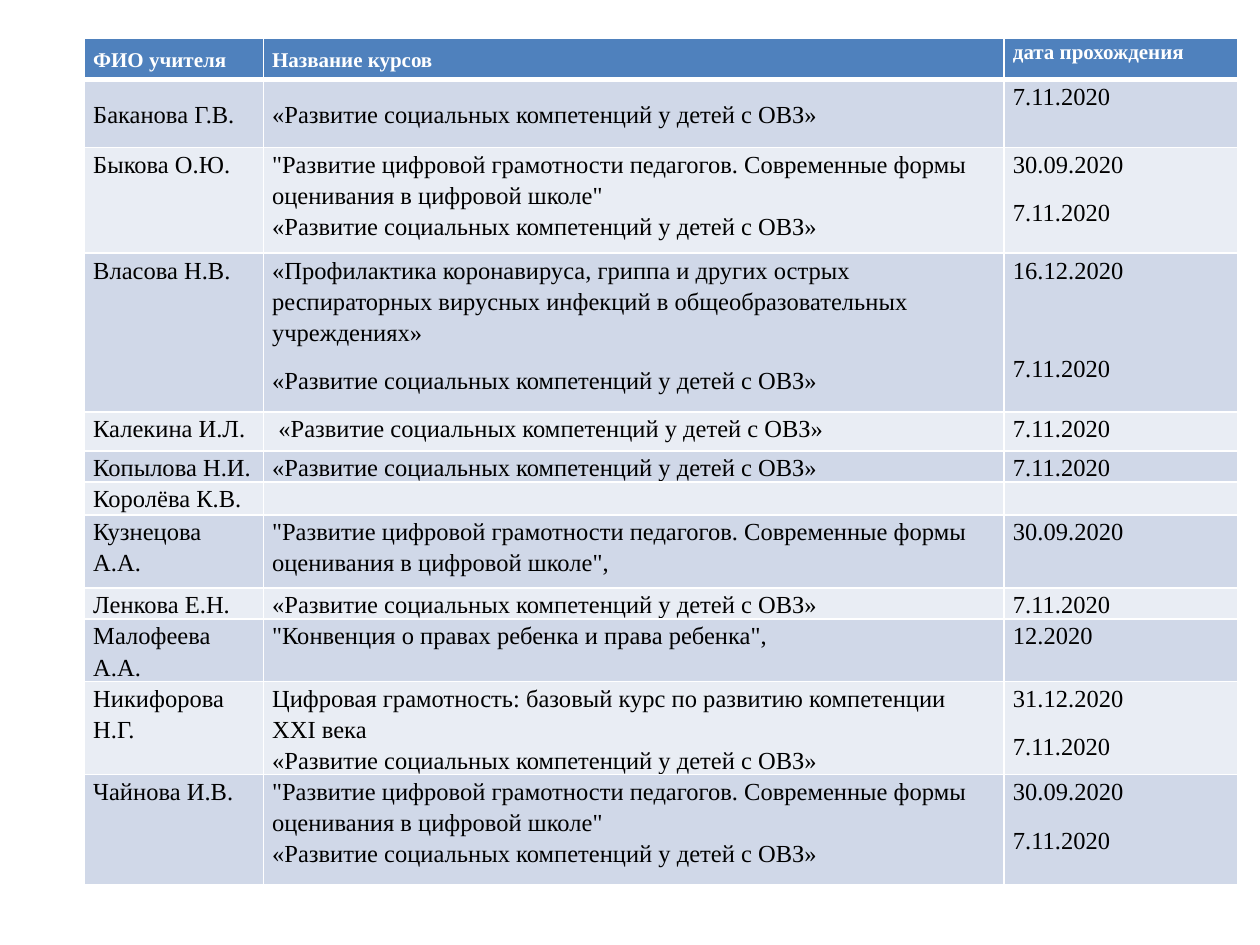
from lxml import etree
from pptx import Presentation, util as u
from pptx.dml.color import RGBColor
from pptx.enum import text
from pptx.oxml import ns

FONT = "Times New Roman"
WHITE, BLACK, HEADER = "FFFFFF", "000000", "4F81BD"
BANDS = ["E9EDF4", "D0D8E8"]
DISABILITY = "«Развитие социальных компетенций у детей с ОВЗ»"
DIGITAL = '"Развитие цифровой грамотности педагогов. Современные формы оценивания в цифровой школе"'


def color(value):
    return RGBColor.from_string(value)


def add_border(cell, side, width):
    line = etree.SubElement(cell._tc.get_or_add_tcPr(), ns.qn("a:ln" + side), w=str(u.Pt(width)))
    fill = etree.SubElement(line, ns.qn("a:solidFill"))
    etree.SubElement(fill, ns.qn("a:srgbClr"), val=WHITE)


# Row height, teacher, courses, dates
rows = [
    (0.33, "ФИО учителя", ["Название курсов"], ["дата прохождения"]),
    (0.54, "Баканова Г.В.", [DISABILITY], ["7.11.2020"]),
    (0.84, "Быкова О.Ю.", [DIGITAL, DISABILITY], ["30.09.2020", "7.11.2020"]),
    (1.26, "Власова Н.В.",
     ["«Профилактика коронавируса, гриппа и других острых респираторных вирусных "
      "инфекций в общеобразовательных учреждениях»", DISABILITY],
     ["16.12.2020", "7.11.2020"]),
    (0.31, "Калекина И.Л.", [DISABILITY], ["7.11.2020"]),
    (0.24, "Копылова Н.И.", [DISABILITY], ["7.11.2020"]),
    (0.26, "Королёва К.В.", [], []),
    (0.58, "Кузнецова А.А.", [DIGITAL + ","], ["30.09.2020"]),
    (0.24, "Ленкова Е.Н.", [DISABILITY], ["7.11.2020"]),
    (0.34, "Малофеева А.А.", ['"Конвенция о правах ребенка и права ребенка",'], ["12.2020"]),
    (0.71, "Никифорова Н.Г.",
     ["Цифровая грамотность: базовый курс по развитию компетенции XXI века", DISABILITY],
     ["31.12.2020", "7.11.2020"]),
    (0.87, "Чайнова И.В.", [DIGITAL, DISABILITY], ["30.09.2020", "7.11.2020"]),
]
widths = [1.42, 5.88, 1.85]

deck = Presentation()
deck.slide_width, deck.slide_height = u.Inches(10), u.Inches(7.5)
page = deck.slides.add_slide(deck.slide_layouts[6])

# Table grid
table = page.shapes.add_table(
    len(rows), len(widths), u.Inches(0.67), u.Inches(0.3),
    u.Inches(sum(widths)), u.Inches(sum(row[0] for row in rows))).table
for column, width in zip(table.columns, widths):
    column.width = u.Inches(width)

for r, (height, teacher, courses, dates) in enumerate(rows):
    table.rows[r].height = u.Inches(height)
    for c, lines in enumerate([[teacher], courses, dates]):
        cell = table.cell(r, c)

        # Borders, fill and margins
        for side in "LRTB":
            heavy = (r, side) in [(0, "B"), (1, "T")]
            add_border(cell, side, 3 if heavy else 1)
        cell.fill.solid()
        cell.fill.fore_color.rgb = color(BANDS[r % 2] if r else HEADER)
        cell.margin_left = cell.margin_right = u.Inches(0.07)
        cell.margin_top = cell.margin_bottom = 0
        if r < 2 and c < 2:
            cell.vertical_anchor = text.MSO_ANCHOR.MIDDLE
        if teacher == "Калекина И.Л." and c == 1:
            cell.margin_left = u.Inches(0.12)

        # Text
        frame = cell.text_frame
        for i, words in enumerate(lines):
            para = frame.add_paragraph() if i else frame.paragraphs[0]
            para.line_spacing = 1.15
            spaced = c != 1 or teacher == "Власова Н.В."
            para.space_after = u.Pt(10 if spaced else 0)
            if i and c == 2 and teacher == "Власова Н.В.":
                para.space_before = u.Pt(28.5)
            span = para.add_run()
            span.text = words
            span.font.name = FONT
            span.font.size = u.Pt(14 if r else 12)
            span.font.bold = r == 0
            span.font.color.rgb = color(BLACK if r else WHITE)
        if not lines:
            # Keep an empty cell as low as its row
            etree.SubElement(frame.paragraphs[0]._p, ns.qn("a:endParaRPr"), sz="1400")

deck.save("out.pptx")
